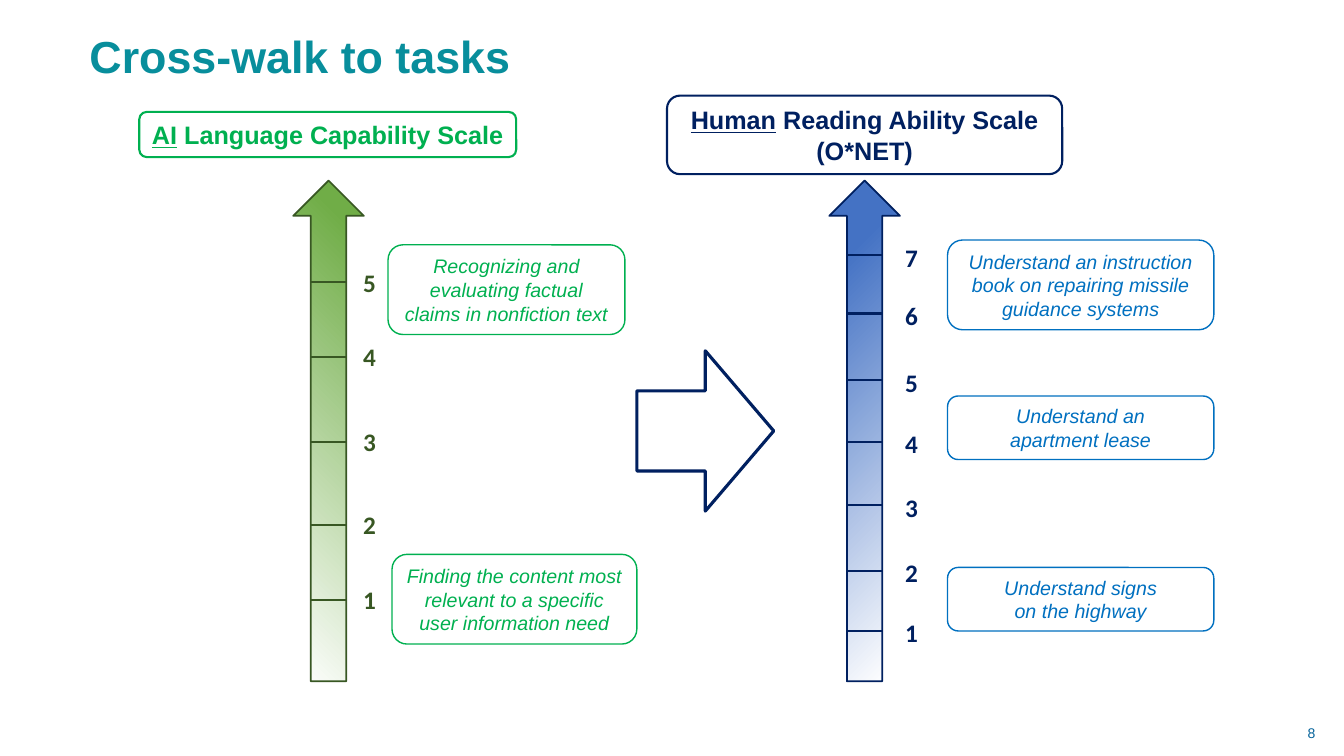
from lxml import etree
from pptx import Presentation
from pptx.dml.color import RGBColor
from pptx.enum.shapes import MSO_CONNECTOR, MSO_SHAPE
from pptx.enum.text import MSO_ANCHOR, PP_ALIGN
from pptx.oxml.ns import qn
from pptx.util import Cm, Pt

LEFT, CENTER, RIGHT = PP_ALIGN.LEFT, PP_ALIGN.CENTER, PP_ALIGN.RIGHT
MIDDLE, TOP = MSO_ANCHOR.MIDDLE, MSO_ANCHOR.TOP
ROUND, UP, NEXT = MSO_SHAPE.ROUNDED_RECTANGLE, MSO_SHAPE.UP_ARROW, MSO_SHAPE.RIGHT_ARROW
STRAIGHT = MSO_CONNECTOR.STRAIGHT

NAVY, GREEN, BLUE, MOSS, WHITE = "002060", "00B050", "0070C0", "385723", "FFFFFF"
rgb = RGBColor.from_string


def write(shape, text, lead="", size=14, color=NAVY, font="Arial", bold=False,
          italic=False, align=LEFT, anchor=TOP, wrap=True):
    frame = shape.text_frame
    frame.word_wrap = wrap
    frame.vertical_anchor = anchor
    for i, row in enumerate(text.split("\n")):
        para = frame.add_paragraph() if i else frame.paragraphs[0]
        para.alignment = align
        parts = [(lead, True), (row, None)] if lead and i == 0 else [(row, None)]
        for part, under in parts:
            run = para.add_run()
            run.text = part
            run.font.size = Pt(size)
            run.font.name = font
            run.font.bold = bold
            run.font.italic = italic
            run.font.underline = under
            run.font.color.rgb = rgb(color)


def draw(kind, x, y, w, h, color, width, fill=None):
    shape = slide.shapes.add_shape(kind, Cm(x), Cm(y), Cm(w), Cm(h))
    shape.shadow.inherit = False
    shape.line.color.rgb = rgb(color)
    shape.line.width = Pt(width)
    if fill:
        shape.fill.solid()
        shape.fill.fore_color.rgb = rgb(fill)
    else:
        shape.fill.background()
    return shape


deck = Presentation()
deck.slide_width, deck.slide_height = Cm(33.87), Cm(19.05)
slide = deck.slides.add_slide(deck.slide_layouts[5])

title = slide.shapes.title
title.left, title.top, title.width, title.height = Cm(2), Cm(0.15), Cm(30.12), Cm(2.51)
write(title, "Cross-walk to tasks", size=32, color="088E9C", bold=True, anchor=MIDDLE)

page = slide.shapes.add_textbox(Cm(32.13), Cm(18.14), Cm(1.27), Cm(0.69))
write(page, "8", size=10, color="04629A", align=RIGHT, wrap=False)

scales = [
    (20.9, NAVY, "4472C4", 0.02, 0.84, ("l", "t"), 22.56, 0.46,
     [15.9, 14.38, 12.73, 11.13, 9.58, 7.9, 6.43]),
    (7.39, MOSS, "70AD47", 0, 0.9, ("t", "r"), 8.9, 0.51,
     [15.11, 13.23, 11.13, 8.99, 7.11]),
]
for x, color, tint, start, end, sides, edge, rise, ticks in scales:
    arrow = draw(UP, x, 4.55, 1.78, 12.62, color, 1.25)
    arrow.fill.gradient()
    stops = arrow.fill.gradient_stops
    for stop, shade, place in zip(stops, (WHITE, tint), (start, end)):
        stop.color.rgb = rgb(shade)
        stop.position = place
    grad = arrow._element.spPr.find(qn("a:gradFill"))
    grad.remove(grad.find(qn("a:lin")))
    ring = etree.SubElement(grad, qn("a:path"), {"path": "circle"})
    etree.SubElement(ring, qn("a:fillToRect"), {side: "100000" for side in sides})
    for level, y in enumerate(ticks, 1):
        tick = slide.shapes.add_connector(STRAIGHT, Cm(x + 0.46), Cm(y), Cm(x + 1.32), Cm(y))
        tick.line.color.rgb = rgb(color)
        tick.line.width = Pt(1.5)
        etree.SubElement(tick._element.spPr, qn("a:effectLst"))
        label = slide.shapes.add_textbox(Cm(edge), Cm(y - rise), Cm(0.66), Cm(0.94))
        write(label, str(level), size=18, color=color, font="Calibri", bold=True)

heads = [
    (16.81, 2.41, 9.96, 1.98, NAVY, "Human", " Reading Ability Scale (O*NET)", True),
    (3.51, 2.82, 9.5, 1.14, GREEN, "AI", " Language Capability Scale", False),
]
for x, y, w, h, color, lead, text, wrap in heads:
    head = draw(ROUND, x, y, w, h, color, 1.5)
    write(head, text, lead=lead, size=18, color=color, bold=True, align=CENTER,
          anchor=MIDDLE, wrap=wrap)

draw(NEXT, 16.05, 8.84, 3.45, 4.04, NAVY, 2.25)

tasks = [
    (9.78, 6.17, 5.97, 2.26, GREEN, "Recognizing and evaluating factual claims in nonfiction text"),
    (9.88, 13.97, 6.17, 2.26, GREEN,
     "Finding the content most relevant to a specific user information need"),
    (23.88, 14.3, 6.71, 1.6, BLUE, "Understand signs\non the highway"),
    (23.88, 9.98, 6.71, 1.6, BLUE, "Understand an\napartment lease"),
    (23.88, 6.05, 6.71, 2.26, BLUE,
     "Understand an instruction book on repairing missile guidance systems"),
]
for x, y, w, h, color, text in tasks:
    task = draw(ROUND, x, y, w, h, color, 1, WHITE)
    write(task, text, color=color, italic=True, align=CENTER, anchor=MIDDLE)

deck.save("out.pptx")
